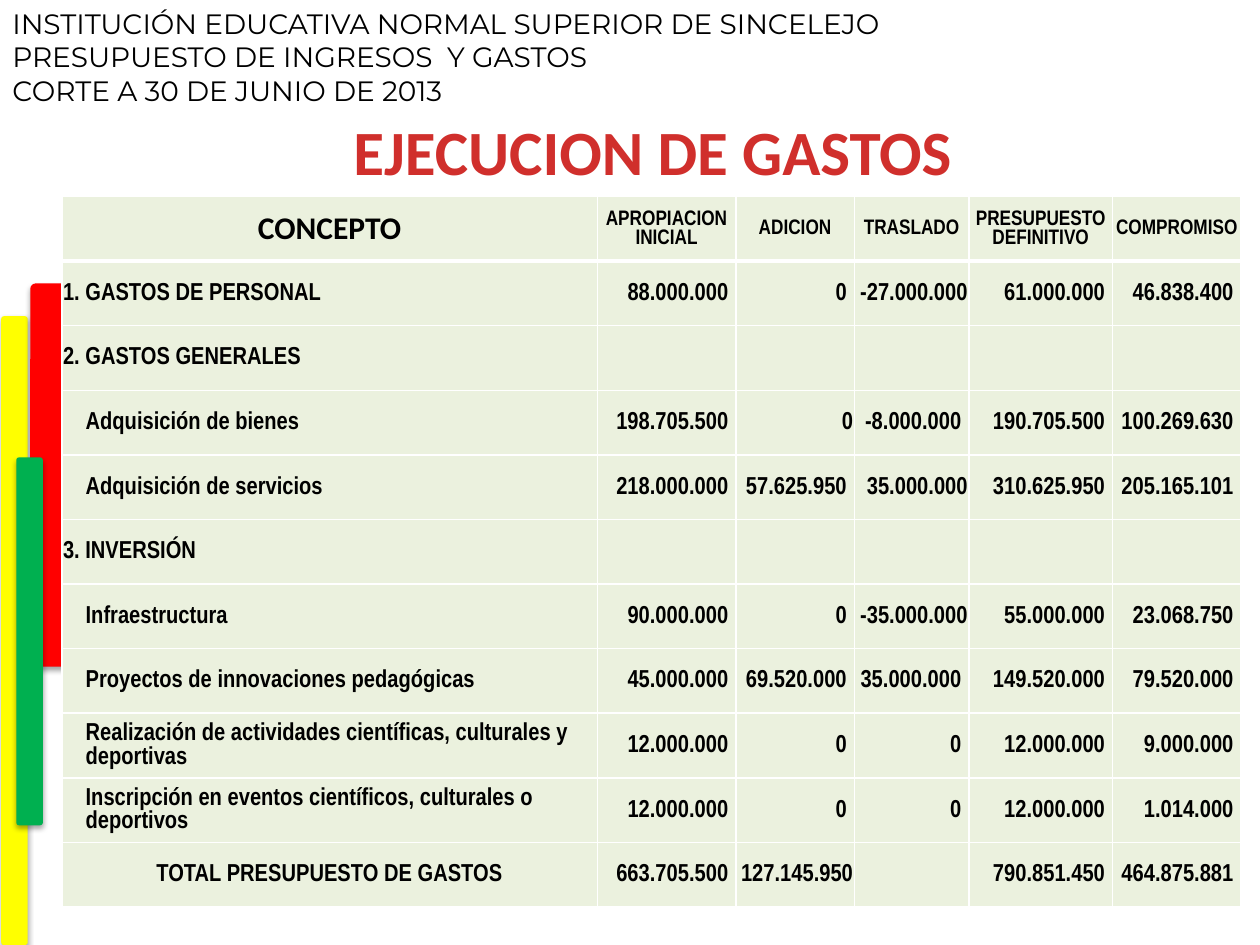
"""Builds the expense execution slide of a school budget report."""
import pptx
import pptx.dml.color
import pptx.enum.shapes
import pptx.enum.text
import pptx.oxml
import pptx.oxml.ns
import pptx.util

Inches = pptx.util.Inches
Pt = pptx.util.Pt
RGB = pptx.dml.color.RGBColor.from_string
ALIGN = pptx.enum.text.PP_ALIGN
ANCHOR = pptx.enum.text.MSO_ANCHOR
AUTOSIZE = pptx.enum.text.MSO_AUTO_SIZE
NS = pptx.oxml.ns.nsdecls("a")

COLORS = {"yellow": "FFFF00", "red": "FF0000", "green": "00B050", "text": "000000",
          "heading": "D02F2C", "cell": "EBF1DE", "border": "FFFFFF"}
FONTS = {
    "institution": {"name": "Montserrat", "size": Pt(16), "bold": False},
    "heading": {"name": "Calibri", "size": Pt(36), "bold": True},
    "concept": {"name": "Calibri", "size": Pt(18), "bold": True},
    "column": {"name": "Arial Narrow", "size": Pt(12), "bold": True},
    "body": {"name": "Arial Narrow", "size": Pt(14), "bold": True},
}
SHADOW = (f'<a:effectLst {NS}><a:outerShdw blurRad="{Pt(3.1)}" dist="{Pt(1.8)}" dir="5400000" '
          'rotWithShape="0"><a:srgbClr val="000000"><a:alpha val="35000"/></a:srgbClr>'
          '</a:outerShdw></a:effectLst>')


def format_font(font, style, color="text"):
    for attribute, value in FONTS[style].items():
        setattr(font, attribute, value)
    font.color.rgb = RGB(COLORS[color])


def format_cell(cell, bottom_width):
    for side, width in (("lnL", 1), ("lnR", 1), ("lnT", 1), ("lnB", bottom_width)):
        cell._tc.get_or_add_tcPr().append(pptx.oxml.parse_xml(
            f'<a:{side} {NS} w="{Pt(width)}"><a:solidFill><a:srgbClr val="{COLORS["border"]}"/>'
            f'</a:solidFill></a:{side}>'))
    cell.fill.solid()
    cell.fill.fore_color.rgb = RGB(COLORS["cell"])
    cell.vertical_anchor = ANCHOR.MIDDLE


deck = pptx.Presentation()
deck.slide_width, deck.slide_height = Inches(10), Inches(7.5)
slide = deck.slides.add_slide(deck.slide_layouts[5])

bars = [("yellow", 0.01, 2.51, 0.21, 4.99), ("red", 0.24, 2.25, 0.42, 3.04),
        ("green", 0.13, 3.63, 0.21, 2.92)]
for color, *box in bars:
    bar = slide.shapes.add_shape(pptx.enum.shapes.MSO_SHAPE.ROUNDED_RECTANGLE,
                                 *[Inches(length) for length in box])
    bar.adjustments[0] = 0.1
    bar.fill.solid()
    bar.fill.fore_color.rgb = RGB(COLORS[color])
    bar.line.fill.background()
    bar._element.spPr.append(pptx.oxml.parse_xml(SHADOW))

institution = slide.shapes.add_textbox(0, 0, Inches(10), Inches(0.94)).text_frame
institution.word_wrap = True
institution.text = ("INSTITUCIÓN EDUCATIVA NORMAL SUPERIOR DE SINCELEJO\n"
                    "PRESUPUESTO DE INGRESOS  Y GASTOS\n"
                    "CORTE A 30 DE JUNIO DE 2013")
for line in institution.paragraphs:
    format_font(line.font, "institution")

heading = slide.shapes.title
placement = {"left": 2.68, "top": 0.84, "width": 5, "height": 0.71}
for attribute, value in placement.items():
    setattr(heading, attribute, Inches(value))
heading.text_frame.text = "EJECUCION DE GASTOS"
heading_format = {"word_wrap": False, "auto_size": AUTOSIZE.SHAPE_TO_FIT_TEXT,
                  "vertical_anchor": ANCHOR.TOP}
for attribute, value in heading_format.items():
    setattr(heading.text_frame, attribute, value)
heading.text_frame.paragraphs[0].alignment = ALIGN.CENTER
format_font(heading.text_frame.paragraphs[0].runs[0].font, "heading", "heading")

column_widths = [4.25, 1.1, 0.94, 0.91, 1.14, 1.02]
expenses = [
    ["CONCEPTO", "APROPIACION INICIAL", "ADICION", "TRASLADO", "PRESUPUESTO DEFINITIVO", "COMPROMISO"],
    ["1. GASTOS DE PERSONAL", "88.000.000", "0", "-27.000.000", "61.000.000", "46.838.400"],
    ["2. GASTOS GENERALES", "", "", "", "", ""],
    ["Adquisición de bienes", "198.705.500", "0", "-8.000.000", "190.705.500", "100.269.630"],
    ["Adquisición de servicios", "218.000.000", "57.625.950", "35.000.000", "310.625.950", "205.165.101"],
    ["3. INVERSIÓN", "", "", "", "", ""],
    ["Infraestructura", "90.000.000", "0", "-35.000.000", "55.000.000", "23.068.750"],
    ["Proyectos de innovaciones pedagógicas", "45.000.000", "69.520.000", "35.000.000", "149.520.000",
     "79.520.000"],
    ["Realización de actividades científicas, culturales y deportivas", "12.000.000", "0", "0",
     "12.000.000", "9.000.000"],
    ["Inscripción en eventos científicos, culturales o deportivos", "12.000.000", "0", "0",
     "12.000.000", "1.014.000"],
    ["TOTAL PRESUPUESTO DE GASTOS", "663.705.500", "127.145.950", "", "790.851.450", "464.875.881"],
]
flush_right = {(1, 3), (3, 2), (4, 3), (6, 3), (10, 2)}
total_row = len(expenses) - 1

budget_frame = slide.shapes.add_table(len(expenses), len(column_widths), Inches(0.49), Inches(1.56),
                                      Inches(sum(column_widths)), Inches(5.64))
budget = budget_frame.table
for column, width in zip(budget.columns, column_widths):
    column.width = Inches(width)

for row, values in enumerate(expenses):
    for col, value in enumerate(values):
        cell = budget.cell(row, col)
        format_cell(cell, 3 if row == 0 else 1)
        right_gap = 0.06 if row and col and (row, col) not in flush_right else 0.01
        margins = {"margin_left": 0.01, "margin_top": 0.01, "margin_right": right_gap, "margin_bottom": 0}
        if col == 0 and row in (0, total_row):
            margins = {"margin_left": 0.1, "margin_right": 0.1}
        for attribute, margin in margins.items():
            setattr(cell, attribute, Inches(margin))
        entry = cell.text_frame.paragraphs[0]
        if row == 0 or (col == 0 and row == total_row):
            entry.alignment = ALIGN.CENTER
        else:
            entry.alignment = ALIGN.RIGHT if col else ALIGN.LEFT
        if col == 0 and 0 < row < total_row and not value[0].isdigit():
            entry._p.get_or_add_pPr().set("marL", str(Inches(0.18)))
        style = "body" if row else "column" if col else "concept"
        if value:
            entry.text = value
            format_font(entry.runs[0].font, style)
        else:
            format_font(entry.font, style)

deck.save("out.pptx")
